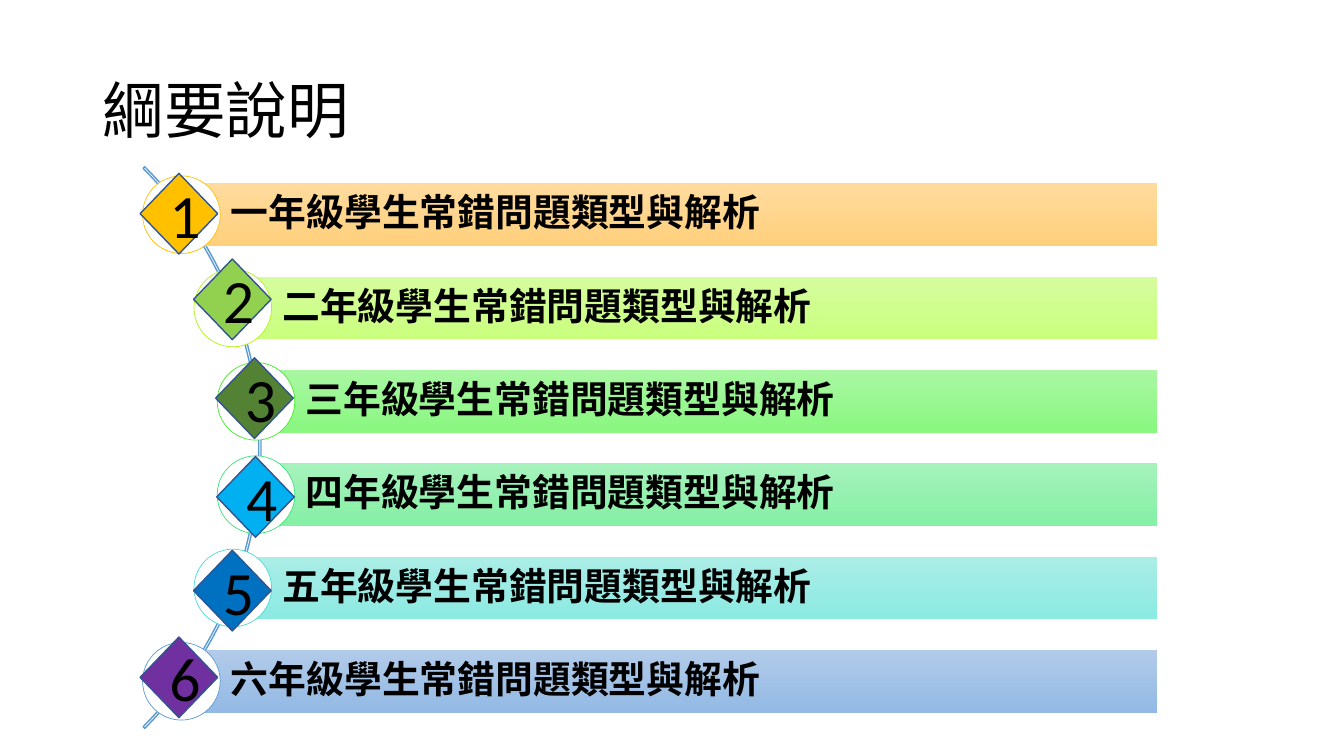
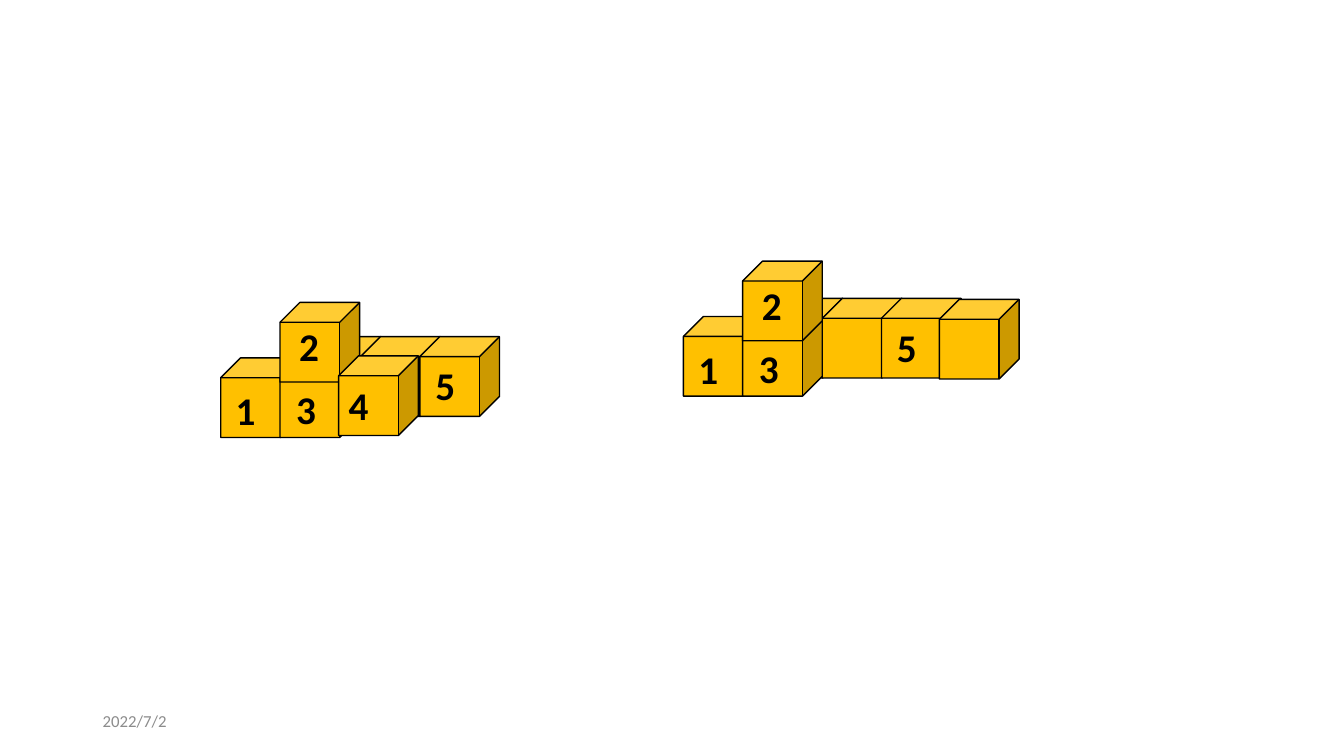
"""Build the outline slide and the stacked-cubes slide."""
import lxml.etree
import pptx
import pptx.dml.color
import pptx.enum.shapes
import pptx.enum.text
import pptx.oxml.ns
import pptx.util

SHAPE = pptx.enum.shapes.MSO_SHAPE
ALIGN = pptx.enum.text.PP_ALIGN
MIDDLE = pptx.enum.text.MSO_ANCHOR.MIDDLE
TOP = pptx.enum.text.MSO_ANCHOR.TOP

SLIDE_WIDTH = pptx.util.Inches(13.333)
SLIDE_HEIGHT = pptx.util.Inches(7.5)
COLUMNS, ROWS = 160, 90

LATIN, CJK = "Calibri", "Noto Sans CJK SC"
BLACK, WHITE, GREY = "000000", "FFFFFF", "8C8C8C"
ARC_BLUE, DIAMOND_EDGE, CUBE_YELLOW = "5B9BD5", "325491", "FFC000"

BAR_TOP, BAR_STEP, BAR_HEIGHT, BAR_RIGHT = 21.84, 11.11, 7.44, 137.76
BADGE, DIAMOND_HEIGHT = 9.24, 9.6
CUBE, CUBE_STEP, CUBE_RISE = 9.48, 7.05, 6.6

# grade, bar left, gradient ends, ring colour, diamond left, diamond top, diamond colour
GRADES = [
    ("一", 21.6, ("FFDB9E", "FFD07C"), "FFC000", 16.68, 20.64, "FFC000"),
    ("二", 27.72, ("D5FC9F", "CAFF7D"), "B2F514", 23.04, 30.84, "92D050"),
    ("三", 30.48, ("A9F7A2", "89F780"), "46EC27", 25.68, 42.6, "548235"),
    ("四", 30.48, ("A6F2BC", "84F0A4"), "39E37B", 25.8, 54.36, "00B0F0"),
    ("五", 27.72, ("ABEDE7", "8BEAE2"), "4ADCD2", 23.04, 65.52, "0070C0"),
    ("六", 21.6, ("B1CBE9", "93B9E4"), "5B9BD5", 16.68, 75.84, "7030A0"),
]


def rgb(value):
    """Turn a hex string into a colour."""
    return pptx.dml.color.RGBColor.from_string(value)


def place(left, top, width, height):
    """Turn grid columns and rows into slide lengths."""
    across, down = SLIDE_WIDTH / COLUMNS, SLIDE_HEIGHT / ROWS
    return [round(n) for n in (left * across, top * down, width * across, height * down)]


def add_figure(slide, kind, box, fill=None, line=None, weight=1.0):
    """Add a preset shape with a plain, gradient or empty fill."""
    figure = slide.shapes.add_shape(kind, *place(*box))
    figure.shadow.inherit = False
    if fill is None:
        figure.fill.background()
    elif isinstance(fill, tuple):
        figure.fill.gradient()
        figure.fill.gradient_angle = 270
        for stop, colour in zip(figure.fill.gradient_stops, fill):
            stop.color.rgb = rgb(colour)
        for stop, position in zip(figure.fill.gradient_stops, (0, 1)):
            stop.position = position
    else:
        figure.fill.solid()
        figure.fill.fore_color.rgb = rgb(fill)
    if line:
        figure.line.color.rgb = rgb(line)
        figure.line.width = pptx.util.Pt(weight)
    else:
        figure.line.fill.background()
    return figure


def write(holder, text, size, colour=BLACK, bold=False, font=LATIN,
          anchor=MIDDLE, align=ALIGN.LEFT, spacing=None):
    """Write one run of text into a shape or text box."""
    frame = holder.text_frame
    frame.word_wrap = True
    frame.vertical_anchor = anchor
    paragraph = frame.paragraphs[0]
    paragraph.alignment = align
    paragraph.line_spacing = spacing
    run = paragraph.add_run()
    run.text = text
    run.font.size = pptx.util.Pt(size)
    run.font.bold = bold
    run.font.name = font
    run.font.color.rgb = rgb(colour)
    east_asian = lxml.etree.SubElement(run.font._element, pptx.oxml.ns.qn("a:ea"))
    east_asian.set("typeface", CJK)


def add_text(slide, box, text, size, **style):
    """Add a text box on the grid."""
    write(slide.shapes.add_textbox(*place(*box)), text, size, **style)


def add_grade_bar(slide, row, grade, left, gradient, ring):
    """Add one grade's bar with the ring at its left end."""
    top = BAR_TOP + row * BAR_STEP
    bar = add_figure(slide, SHAPE.RECTANGLE,
                     (left, top, BAR_RIGHT - left, BAR_HEIGHT), gradient)
    frame = bar.text_frame
    frame.margin_left = pptx.util.Inches(0.49)
    frame.margin_top = frame.margin_right = frame.margin_bottom = pptx.util.Inches(0.07)
    write(bar, f"{grade}年級學生常錯問題類型與解析", 27, bold=True, font=CJK, spacing=0.9)
    ring_top = top + (BAR_HEIGHT - BADGE) / 2
    add_figure(slide, SHAPE.OVAL, (left - BADGE / 2, ring_top, BADGE, BADGE),
               WHITE, ring, 0.5)


def add_cube(slide, left, top):
    """Add one yellow cube."""
    add_figure(slide, SHAPE.CUBE, (left, top, CUBE, CUBE), CUBE_YELLOW, BLACK)


def add_cube_label(slide, left, top, number):
    """Add the number on a cube's front."""
    add_text(slide, (left, top, 5.28, 6.84), number, 28, bold=True, anchor=TOP)


def add_cube_row(slide, left, top):
    """Add three cubes side by side, the last but one group numbered 5."""
    for index in range(3):
        add_cube(slide, left + index * CUBE_STEP, top)
    add_cube_label(slide, left + 14.76, top + 2.34, "5")


def add_cube_tower(slide, left, top):
    """Add two cubes with a third on top of the right one."""
    for across, up in ((0, 0), (1, 0), (1, 1)):
        add_cube(slide, left + across * CUBE_STEP, top - up * CUBE_RISE)
    for number, across, down in (("1", 0.6, 2.8), ("2", 8.16, -4.8), ("3", 7.8, 2.7)):
        add_cube_label(slide, left + across, top + down, number)


def build_outline(slide):
    """Build the outline of the six grades."""
    add_text(slide, (11.04, 4.8, 138, 17.4), "綱要說明", 44, spacing=0.9)
    arc = add_figure(slide, SHAPE.BLOCK_ARC, (-63.48, 6, 94.56, 94.56), line=ARC_BLUE)
    for index, value in enumerate((189, 27, 0.003)):
        arc.adjustments[index] = value
    for row, (grade, left, gradient, ring, *_) in enumerate(GRADES):
        add_grade_bar(slide, row, grade, left, gradient, ring)
    for number, (*_, left, top, colour) in enumerate(GRADES, 1):
        diamond = add_figure(slide, SHAPE.DIAMOND, (left, top, BADGE, DIAMOND_HEIGHT),
                             colour, DIAMOND_EDGE)
        write(diamond, str(number), 44, align=ALIGN.CENTER)


def build_cubes(slide):
    """Build the two cube arrangements and the date."""
    add_text(slide, (11.04, 83.4, 36, 4.8), "2022/7/2", 12, colour=GREY)
    add_cube_row(slide, 35.88, 40.08)
    add_cube_tower(slide, 26.28, 42.6)
    add_cube(slide, 40.32, 42.36)
    add_cube_label(slide, 40.32, 44.76, "4")
    add_cube_row(slide, 90.84, 35.52)
    add_cube_tower(slide, 81.36, 37.68)
    add_cube(slide, 111.84, 35.64)


def main():
    """Build and save the presentation."""
    deck = pptx.Presentation()
    deck.slide_width, deck.slide_height = SLIDE_WIDTH, SLIDE_HEIGHT
    for build in (build_outline, build_cubes):
        build(deck.slides.add_slide(deck.slide_layouts[6]))
    deck.save("out.pptx")


if __name__ == "__main__":
    main()
